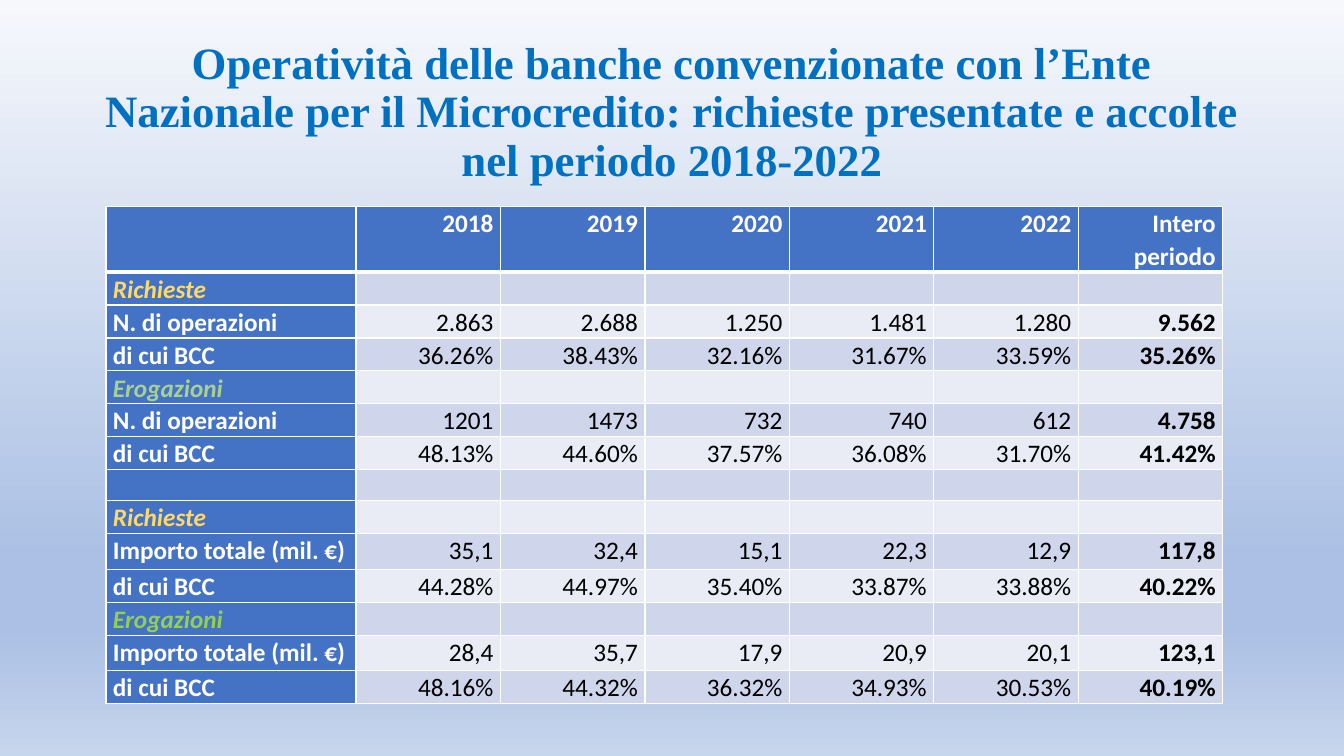
import pptx
import pptx.dml.color
import pptx.enum.text
import pptx.util
import lxml.etree

Pt = pptx.util.Pt
ALIGN = pptx.enum.text.PP_ALIGN
DRAWING = "{http://schemas.openxmlformats.org/drawingml/2006/main}"


def color(hex_code):
    return pptx.dml.color.RGBColor.from_string(hex_code)


def add_border(cell, side, width):
    line = lxml.etree.SubElement(cell._tc.get_or_add_tcPr(), DRAWING + side, w=str(Pt(width)))
    fill = lxml.etree.SubElement(line, DRAWING + "solidFill")
    lxml.etree.SubElement(fill, DRAWING + "srgbClr", val="FFFFFF")


deck = pptx.Presentation()
deck.slide_width, deck.slide_height = Pt(960), Pt(540)
slide = deck.slides.add_slide(deck.slide_layouts[5])

# Background gradient, top to bottom
background = slide.background.fill
background.gradient()
background.gradient_angle = 270
stops = slide._element.xpath(".//a:gsLst")[0]
for stop in list(stops):
    stops.remove(stop)
for percent, shade in [(0, "F6F8FC"), (74, "ABC0E4"), (83, "ABC0E4"), (100, "C7D5ED")]:
    stop = lxml.etree.SubElement(stops, DRAWING + "gs", pos=str(percent * 1000))
    lxml.etree.SubElement(stop, DRAWING + "srgbClr", val=shade)

# Title
title = slide.shapes.title
title.left, title.top, title.width, title.height = Pt(66), Pt(28.75), Pt(828), Pt(104.4)
title.text_frame.text = (
    "Operatività delle banche convenzionate con l’Ente Nazionale per il "
    "Microcredito: richieste presentate e accolte nel periodo 2018-2022"
)
title.text_frame.auto_size = pptx.enum.text.MSO_AUTO_SIZE.NONE
title.text_frame.vertical_anchor = pptx.enum.text.MSO_ANCHOR.MIDDLE
para = title.text_frame.paragraphs[0]
para.alignment = ALIGN.CENTER
para.line_spacing = 0.9
para.font.name = "Times New Roman"
para.font.size = Pt(32)
para.font.bold = True
para.font.color.rgb = color("0070C0")

# Table: each row is a label followed by five years and the whole period
rows = [
    ["", "2018", "2019", "2020", "2021", "2022", "Intero periodo"],
    ["Richieste"],
    ["N. di operazioni", "2.863", "2.688", "1.250", "1.481", "1.280", "9.562"],
    ["di cui BCC", "36.26%", "38.43%", "32.16%", "31.67%", "33.59%", "35.26%"],
    ["Erogazioni"],
    ["N. di operazioni", "1201", "1473", "732", "740", "612", "4.758"],
    ["di cui BCC", "48.13%", "44.60%", "37.57%", "36.08%", "31.70%", "41.42%"],
    [""],
    ["Richieste"],
    ["Importo totale (mil. €)", "35,1", "32,4", "15,1", "22,3", "12,9", "117,8"],
    ["di cui BCC", "44.28%", "44.97%", "35.40%", "33.87%", "33.88%", "40.22%"],
    ["Erogazioni"],
    ["Importo totale (mil. €)", "28,4", "35,7", "17,9", "20,9", "20,1", "123,1"],
    ["di cui BCC", "48.16%", "44.32%", "36.32%", "34.93%", "30.53%", "40.19%"],
]
heading_colors = {1: "FFD966", 4: "A9D18E", 8: "FFD966", 11: "92D050"}
row_heights = {0: 43.2, 9: 25.7, 12: 25.2}
last_column = len(rows[0]) - 1

table = slide.shapes.add_table(
    len(rows), len(rows[0]), Pt(75.7), Pt(147.3), Pt(797.8), Pt(339)
).table
table.first_col = True
for index, column in enumerate(table.columns):
    column.width = Pt(103.2) if index else Pt(178.6)

for row_index, values in enumerate(rows):
    table.rows[row_index].height = Pt(row_heights.get(row_index, 20.9))
    for column_index in range(last_column + 1):
        cell = table.cell(row_index, column_index)
        is_header = row_index == 0
        is_label = column_index == 0

        add_border(cell, "lnL", 1)
        add_border(cell, "lnR", 1)
        add_border(cell, "lnT", 3 if row_index == 1 else 1)
        add_border(cell, "lnB", 3 if is_header else 1)
        cell.fill.solid()
        band = "CFD5EA" if row_index % 2 else "E9EBF5"
        cell.fill.fore_color.rgb = color("4472C4" if is_header or is_label else band)
        cell.margin_left = cell.margin_right = Pt(5)
        cell.margin_top = cell.margin_bottom = 0

        if column_index < len(values):
            cell.text = values[column_index]
        para = cell.text_frame.paragraphs[0]
        para.alignment = ALIGN.JUSTIFY if is_label else ALIGN.RIGHT
        para.line_spacing = 1.07
        para.space_after = Pt(8)
        para.font.name = "Calibri"
        para.font.size = Pt(18)
        para.font.bold = is_header or is_label or column_index == last_column
        para.font.italic = is_label and row_index in heading_colors
        label_color = heading_colors.get(row_index, "FFFFFF")
        para.font.color.rgb = color(label_color if is_header or is_label else "000000")

deck.save("out.pptx")
